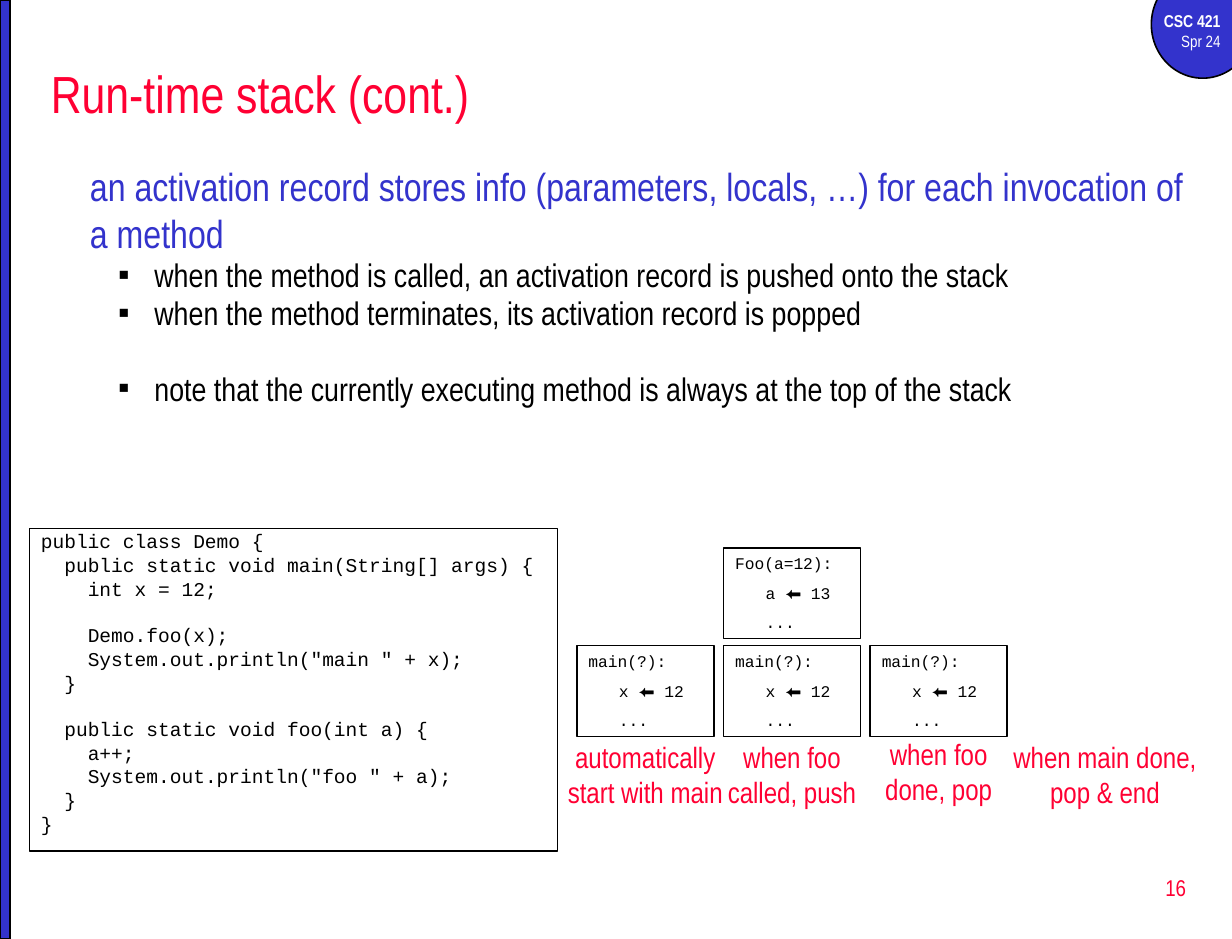
from dataclasses import dataclass

from pptx import Presentation
from pptx.dml.color import RGBColor as RGB
from pptx.enum.shapes import MSO_SHAPE as SHAPE
from pptx.enum.text import MSO_ANCHOR as ANCHOR, MSO_AUTO_SIZE as AUTO, PP_ALIGN as ALIGN
from pptx.oxml.ns import qn
from pptx.util import Inches, Pt


@dataclass(frozen=True)
class Theme:
    red: str = "FF0033"
    blue: str = "3333CC"
    black: str = "000000"
    white: str = "FFFFFF"
    sans: str = "Arial Narrow"
    mono: str = "Courier New"
    title: float = 32
    lead: float = 24
    bullet: float = 20
    label: float = 18
    number: float = 14
    code: float = 12
    course: float = 10.5
    small: float = 10


T = Theme()
COLS, ROWS = 126, 96  # grid of twelfths of an inch


class Deck:
    """Holds the theme, the grid and the current slide."""

    def __init__(self, width, height):
        self.prs = Presentation()
        self.prs.slide_width, self.prs.slide_height = Inches(width), Inches(height)
        self.s = self.prs.slides.add_slide(self.prs.slide_layouts[1])

    def box(self, col, row, cols, rows):
        w, h = self.prs.slide_width / COLS, self.prs.slide_height / ROWS
        return [round(v) for v in (col * w, row * h, cols * w, rows * h)]

    def fill_text(self, tf, paras, size, color, font=T.sans, anchor=ANCHOR.TOP):
        """Each paragraph is its text and a dict of format values."""
        frame = dict(word_wrap=True, auto_size=AUTO.NONE, vertical_anchor=anchor,
                     margin_left=Inches(0.1), margin_right=Inches(0.1),
                     margin_top=Inches(0.05), margin_bottom=Inches(0.05))
        for name, value in frame.items():
            setattr(tf, name, value)
        for i, (text, fmt) in enumerate(paras):
            p = tf.add_paragraph() if i else tf.paragraphs[0]
            look = dict(alignment=ALIGN.LEFT, space_before=Pt(0), line_spacing=1.0, level=0)
            look.update((k, v) for k, v in fmt.items() if k in look)
            for name, value in look.items():
                setattr(p, name, value)
            self.indent(p, fmt.get("left", 0), fmt.get("hang", 0), fmt.get("mark"))
            r = p.add_run()
            r.text = text
            face = dict(name=font, size=Pt(fmt.get("size", size)), bold=fmt.get("bold", False))
            for name, value in face.items():
                setattr(r.font, name, value)
            r.font.color.rgb = RGB.from_string(fmt.get("color", color))

    def indent(self, p, left, hang, mark):
        pPr = p._p.get_or_add_pPr()
        pPr.set("marL", str(Inches(left)))
        pPr.set("indent", str(-Inches(hang)))
        bullet = pPr.makeelement(qn("a:buChar" if mark else "a:buNone"), {})
        if mark:
            bullet.set("char", mark)
        pPr.append(bullet)

    def shape(self, kind, at, fill=None, line=1.0):
        sp = self.s.shapes.add_shape(kind, *self.box(*at))
        sp.shadow.inherit = False
        if fill:
            sp.fill.solid()
            sp.fill.fore_color.rgb = RGB.from_string(fill)
        else:
            sp.fill.background()
        sp.line.color.rgb = RGB.from_string(T.black)
        sp.line.width = Pt(line)
        return sp

    def text(self, at, paras, size, color, **kw):
        sp = self.s.shapes.add_textbox(*self.box(*at))
        self.fill_text(sp.text_frame, paras, size, color, **kw)

    def placeholder(self, idx, at, paras, size, color, **kw):
        sp = self.s.placeholders[idx]
        sp.left, sp.top, sp.width, sp.height = self.box(*at)
        self.fill_text(sp.text_frame, paras, size, color, **kw)

    def code(self, at, lines):
        paras = []
        for depth, gap, line in lines:
            before = (17 if gap else 3) if paras else 0
            paras.append((line, dict(left=0.2 * depth, line_spacing=0.8, space_before=Pt(before))))
        sp = self.shape(SHAPE.RECTANGLE, at, line=0.75)
        self.fill_text(sp.text_frame, paras, T.code, T.black, font=T.mono)

    def record(self, col, row, lines):
        """One activation record: a heading and its indented contents."""
        head, *rest = lines
        paras = [(head, {})] + [(t, dict(left=0.26, space_before=Pt(6))) for t in rest]
        sp = self.shape(SHAPE.RECTANGLE, (col, row, 14, 9.3))
        self.fill_text(sp.text_frame, paras, T.small, T.black, font=T.mono)

    def label(self, at, text):
        self.text(at, [(text, dict(alignment=ALIGN.CENTER))], T.label, T.red)


LEAD = "an activation record stores info (parameters, locals, …) for each invocation of a method"
BULLETS = [  # text, space before
    ("when the method is called, an activation record is pushed onto the stack", 4),
    ("when the method terminates, its activation record is popped", 4),
    ("note that the currently executing method is always at the top of the stack", 27),
]
CODE = [  # depth, gap above, line
    (0, False, "public class Demo {"),
    (1, False, "public static void main(String[] args) {"),
    (2, False, "int x = 12;"),
    (2, True, "Demo.foo(x);"),
    (2, False, 'System.out.println("main " + x);'),
    (1, False, "}"),
    (1, True, "public static void foo(int a) {"),
    (2, False, "a++;"),
    (2, False, 'System.out.println("foo " + a);'),
    (1, False, "}"),
    (0, False, "}"),
]
MAIN = ("main(?):", "x ⬅ 12", "...")
FOO = ("Foo(a=12):", "a ⬅ 13", "...")
STAGES = [  # stack from the bottom up, label, label place
    ([MAIN], "automatically start with main", (56, 75, 20, 8.4)),
    ([MAIN, FOO], "when foo called, push", (71, 75, 20, 8.4)),
    ([MAIN], "when foo done, pop", (88, 74.7, 16, 8.4)),
    ([], "when main done, pop & end", (102, 75, 22, 8.4)),
]


def main():
    d = Deck(10.5, 8)
    right = dict(alignment=ALIGN.RIGHT)

    # Course badge and side bar
    d.shape(SHAPE.OVAL, (117.75, -3, 10.5, 11), T.blue)
    d.text((116, 0.5, 10, 5.5), [("CSC 421", dict(right, bold=True)),
                                 ("Spr 24", dict(right, size=T.small))], T.course, T.white)
    d.shape(SHAPE.RECTANGLE, (0, 0, 1, ROWS), T.blue)

    # Slide number, title and list
    d.text((96.25, 87.5, 26.25, 6.4), [("16", right)], T.number, T.red, anchor=ANCHOR.MIDDLE)
    d.placeholder(0, (4, 5, 119, 9), [("Run-time stack (cont.)", {})],
                  T.title, T.red, anchor=ANCHOR.MIDDLE)
    item = dict(level=1, left=0.55, hang=0.31, mark="▪", line_spacing=0.8,
                size=T.bullet, color=T.black)
    items = [(t, dict(item, space_before=Pt(gap))) for t, gap in BULLETS]
    d.placeholder(1, (8, 16, 115.25, 27), [(LEAD, {})] + items, T.lead, T.blue)

    # Program and the stages of its stack
    d.code((3, 54, 54, 33), CODE)
    for i, (stack, caption, at) in enumerate(STAGES):
        for level, lines in enumerate(stack):
            d.record(59 + 15 * i, 66 - 10 * level, lines)
        d.label(at, caption)

    d.prs.save("out.pptx")


if __name__ == "__main__":
    main()
